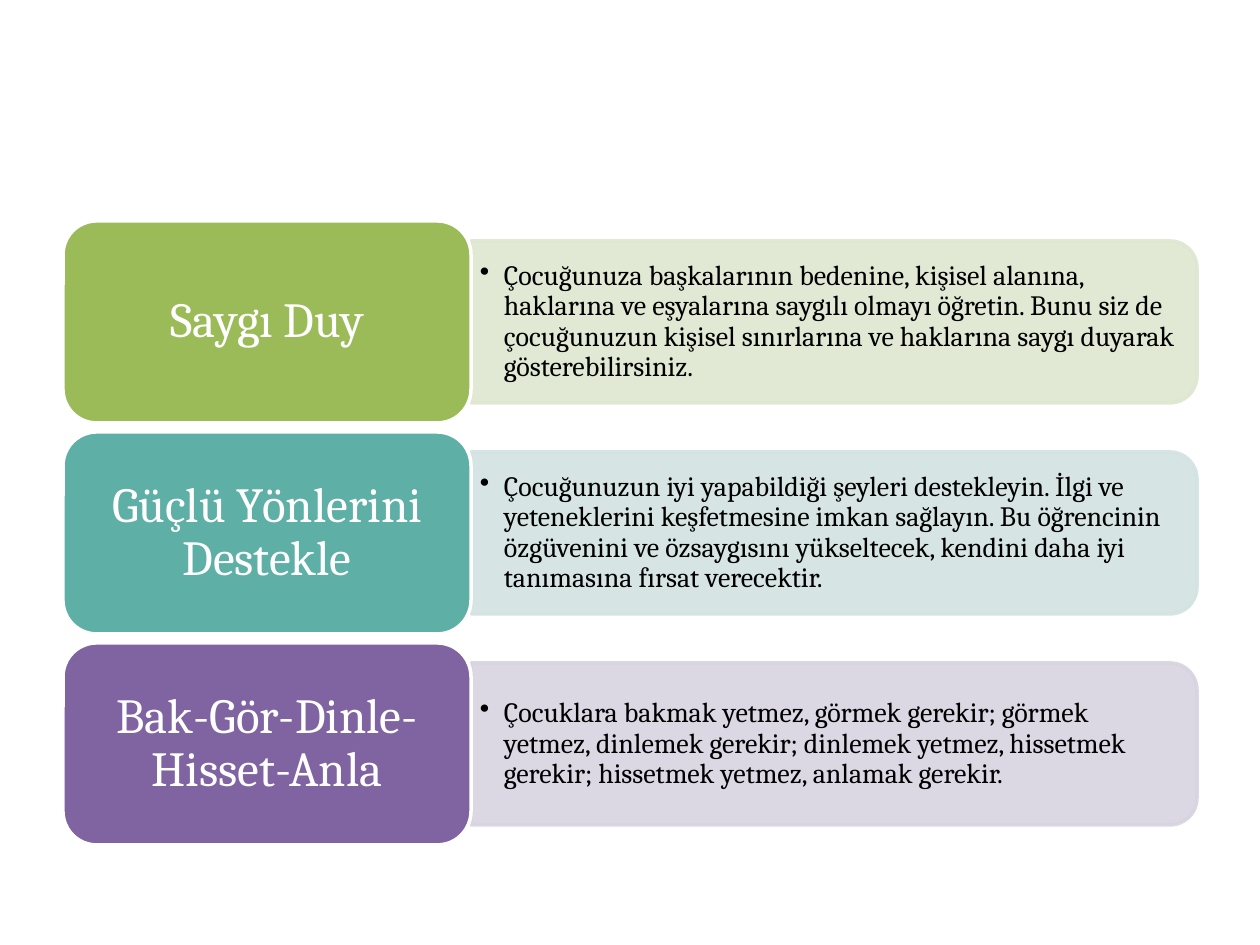
from dataclasses import dataclass

from lxml import etree
from pptx import Presentation
from pptx.dml.color import RGBColor
from pptx.enum.shapes import MSO_SHAPE as Preset
from pptx.enum.text import MSO_ANCHOR as Anchor, PP_ALIGN as Align
from pptx.oxml.ns import qn
from pptx.util import Emu, Pt

PX = 914400 / 126


def px(length):
    return Emu(round(length * PX))


@dataclass(frozen=True)
class Theme:
    font: str = "Cambria"
    heading_size: int = 28
    detail_size: int = 16
    line_width: int = 2
    line_spacing: float = 0.9
    panel_opacity: int = 90
    white: str = "FFFFFF"
    black: str = "000000"
    green: str = "9BBB59"
    pale_green: str = "DEE7D1"
    teal: str = "5EAFA6"
    pale_teal: str = "D2E3E2"
    purple: str = "8064A2"
    pale_purple: str = "D8D3E0"


class Painter:
    """Draws the elements of one slide in a shared style."""

    def __init__(self, page, theme):
        self.page = page
        self.theme = theme

    def shape(self, preset, left, top, width, height, fill, line):
        shape = self.page.shapes.add_shape(preset, px(left), px(top), px(width), px(height))
        shape.shadow.inherit = False
        shape.fill.solid()
        shape.fill.fore_color.rgb = RGBColor.from_string(fill)
        shape.line.color.rgb = RGBColor.from_string(line)
        shape.line.width = Pt(self.theme.line_width)
        return shape

    def add_text(self, box, text, size, color, align, inset_x, inset_y, indent=0):
        """Fill a box with one paragraph; an indent makes it a bullet."""
        frame = box.text_frame
        frame.word_wrap = True
        frame.vertical_anchor = Anchor.MIDDLE
        frame.margin_left = frame.margin_right = px(inset_x)
        frame.margin_top = frame.margin_bottom = px(inset_y)
        para = frame.paragraphs[0]
        para.alignment = align
        para.line_spacing = self.theme.line_spacing
        if indent:
            para.level = 1
            props = para._p.get_or_add_pPr()
            props.set("marL", str(px(indent)))
            props.set("indent", str(-px(indent)))
            etree.SubElement(props, qn("a:buChar")).set("char", "•")
        span = para.add_run()
        span.text = text
        span.font.name = self.theme.font
        span.font.size = Pt(size)
        span.font.color.rgb = RGBColor.from_string(color)

    def panel(self, left, top, width, height, color):
        """Add a translucent bar whose right corners are rounded."""
        shift = (width - height) / 2
        bar = self.shape(Preset.ROUND_2_SAME_RECTANGLE, left + shift, top - shift,
                         height, width, color, color)
        bar.rotation = 90
        for tint in bar._element.spPr.iter(qn("a:srgbClr")):
            alpha = etree.SubElement(tint, qn("a:alpha"))
            alpha.set("val", str(self.theme.panel_opacity * 1000))

    def detail(self, left, top, width, height, text):
        box = self.page.shapes.add_textbox(px(left), px(top), px(width), px(height))
        self.add_text(box, text, self.theme.detail_size, self.theme.black,
                      Align.LEFT, 9, 4, indent=24)

    def card(self, left, top, width, height, text, color):
        card = self.shape(Preset.ROUNDED_RECTANGLE, left, top, width, height,
                          color, self.theme.white)
        self.add_text(card, text, self.theme.heading_size, self.theme.white,
                      Align.CENTER, 15, 8)


def main():
    theme = Theme()
    deck = Presentation()
    deck.slide_width, deck.slide_height = px(1260), px(945)
    painter = Painter(deck.slides.add_slide(deck.slide_layouts[6]), theme)

    rows = [
        ("Saygı Duy",
         "Çocuğunuza başkalarının bedenine, kişisel alanına, haklarına ve eşyalarına "
         "saygılı olmayı öğretin. Bunu siz de çocuğunuzun kişisel sınırlarına ve "
         "haklarına saygı duyarak gösterebilirsiniz.",
         theme.green, theme.pale_green),
        ("Güçlü Yönlerini Destekle",
         "Çocuğunuzun iyi yapabildiği şeyleri destekleyin. İlgi ve yeteneklerini "
         "keşfetmesine imkan sağlayın. Bu öğrencinin özgüvenini ve özsaygısını "
         "yükseltecek, kendini daha iyi tanımasına fırsat verecektir.",
         theme.teal, theme.pale_teal),
        ("Bak-Gör-Dinle-Hisset-Anla",
         "Çocuklara bakmak yetmez, görmek gerekir; görmek yetmez, dinlemek gerekir; "
         "dinlemek yetmez, hissetmek gerekir; hissetmek yetmez, anlamak gerekir.",
         theme.purple, theme.pale_purple),
    ]
    left, first_top, pitch = 63, 221, 211
    card_width, card_height = 408, 202
    panel_left = left + card_width
    for index, (heading, detail, color, pale) in enumerate(rows):
        top = first_top + index * pitch
        painter.panel(panel_left, top + 20, 726, 162, pale)
        painter.detail(panel_left, top + 28, 718, 146, detail)
        painter.card(left, top, card_width, card_height, heading, color)

    deck.save("out.pptx")


if __name__ == "__main__":
    main()
